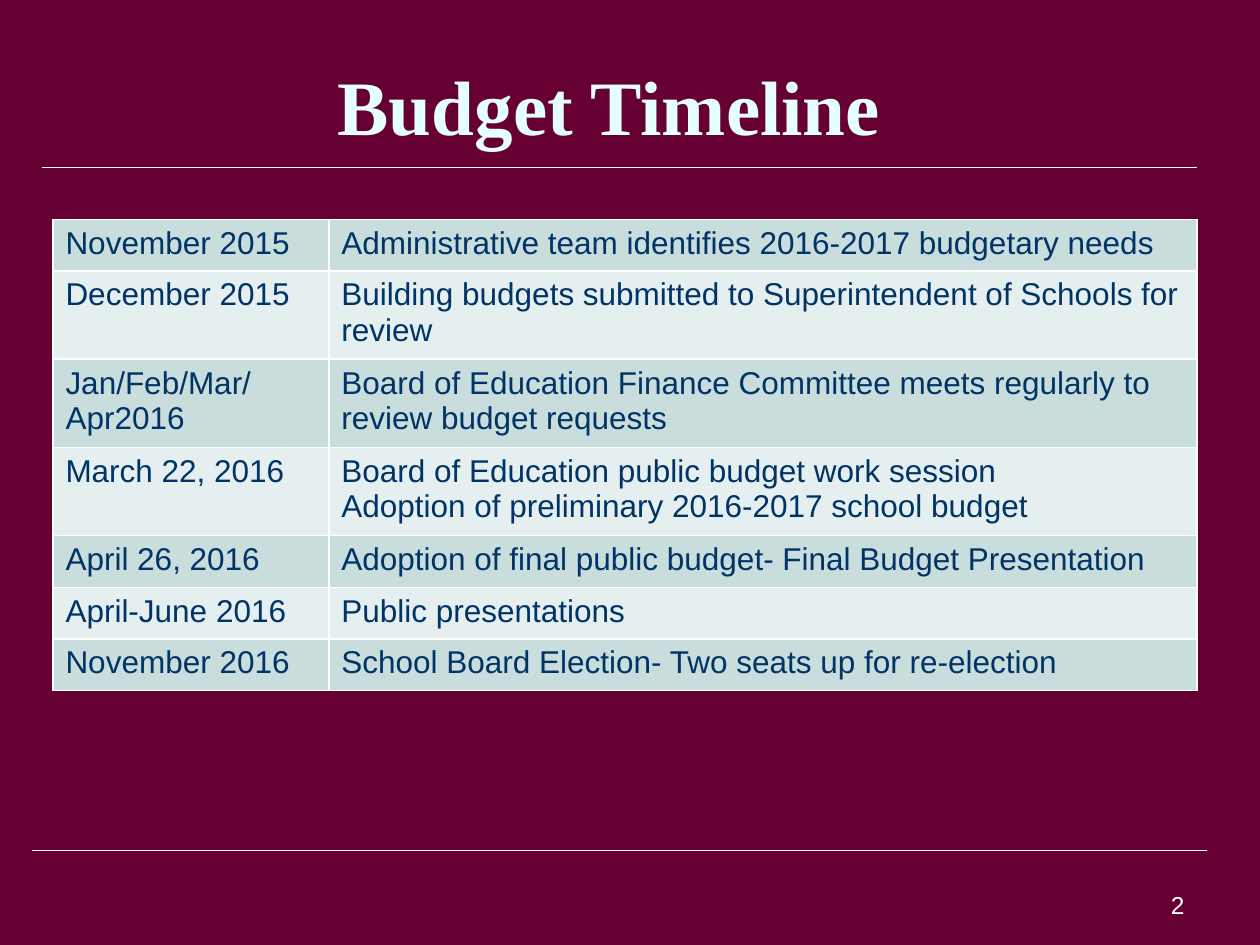
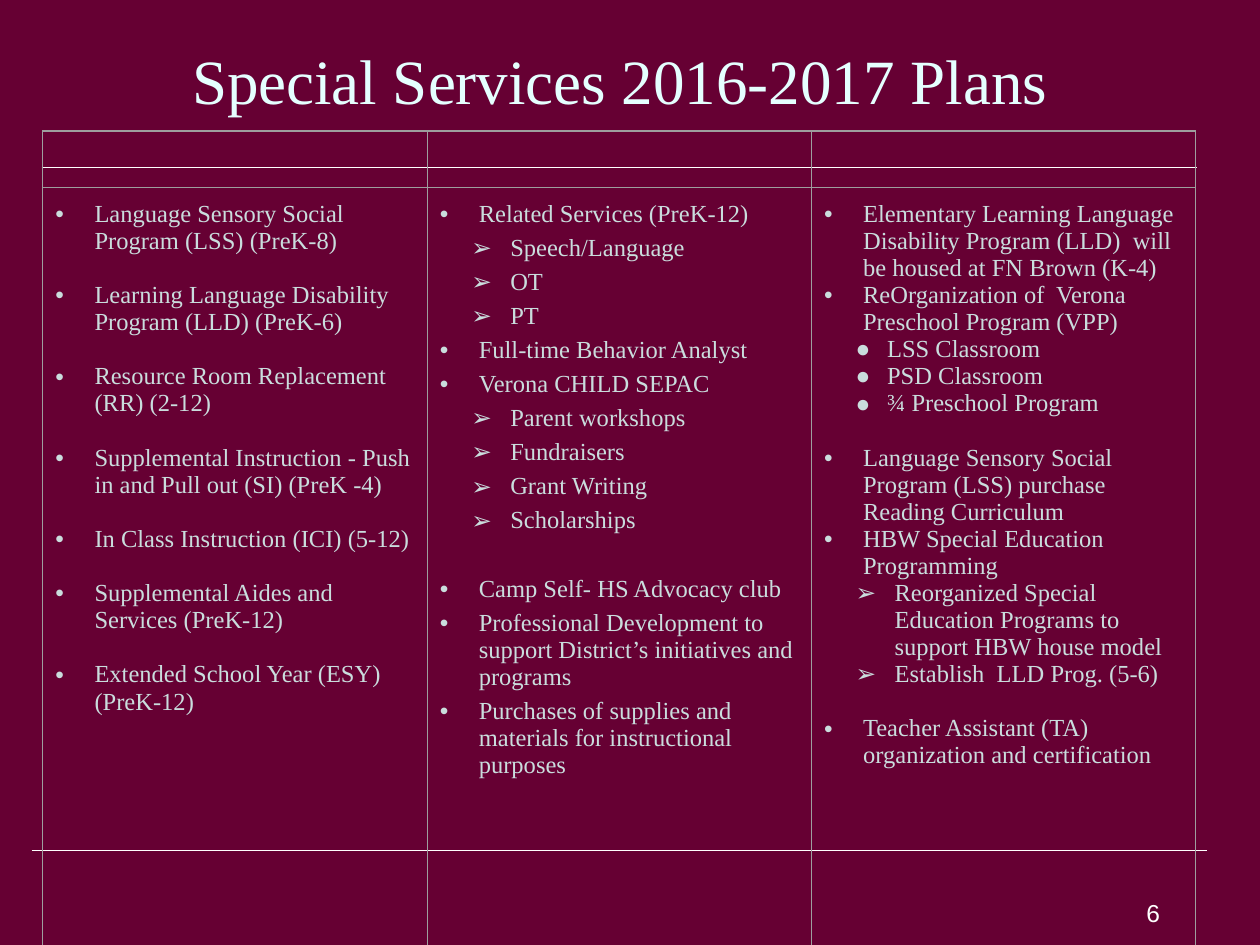
from lxml import etree
from pptx import Presentation
from pptx.dml.color import RGBColor
from pptx.enum.shapes import MSO_CONNECTOR
from pptx.enum.text import MSO_ANCHOR, PP_ALIGN
from pptx.oxml.ns import qn
from pptx.util import Pt

LINE = MSO_CONNECTOR.STRAIGHT
TOP, MID, BASE = MSO_ANCHOR.TOP, MSO_ANCHOR.MIDDLE, MSO_ANCHOR.BOTTOM
LEFT, MIDST, RIGHT = PP_ALIGN.LEFT, PP_ALIGN.CENTER, PP_ALIGN.RIGHT

SCALE = 9144
WINE, WHITE, ICE, NAVY, GREY = "660033", "FFFFFF", "E5FFFF", "003366", "9E9E9E"
MINT, PALE = "CADDDD", "E6EFEF"
SANS, SERIF = "Arial", "Times New Roman"
RULES = [(33, 133, 950), (25, 675, 958)]
ROW_GAP = 15.5

DATES = [
    ("November 2015", "Administrative team identifies 2016-2017 budgetary needs"),
    ("December 2015", "Building budgets submitted to Superintendent of Schools for review"),
    ("Jan/Feb/Mar/Apr2016",
     "Board of Education Finance Committee meets regularly to review budget requests"),
    ("March 22, 2016",
     "Board of Education public budget work session\n"
     "Adoption of preliminary 2016-2017 school budget"),
    ("April 26, 2016", "Adoption of final public budget- Final Budget Presentation"),
    ("April-June 2016", "Public presentations"),
    ("November 2016", "School Board Election- Two seats up for re-election"),
]

DOT, DART, DISC = "•", "➢", "●"
INDENTS = {DOT: (31, 31), DART: (56, 31), DISC: (50, 25)}

PLANS = [
    (0, [
        [(DOT, "Language Sensory Social Program (LSS) (PreK-8)")],
        [(DOT, "Learning Language Disability Program (LLD) (PreK-6)")],
        [(DOT, "Resource Room Replacement (RR) (2-12)")],
        [(DOT, "Supplemental Instruction - Push in and Pull out (SI) (PreK -4)")],
        [(DOT, "In Class Instruction (ICI) (5-12)")],
        [(DOT, "Supplemental Aides and Services (PreK-12)")],
        [(DOT, "Extended School Year (ESY) (PreK-12)")],
    ]),
    (4, [
        [(DOT, "Related Services (PreK-12)"),
         (DART, "Speech/Language"),
         (DART, "OT"),
         (DART, "PT"),
         (DOT, "Full-time Behavior Analyst"),
         (DOT, "Verona CHILD SEPAC"),
         (DART, "Parent workshops"),
         (DART, "Fundraisers"),
         (DART, "Grant Writing"),
         (DART, "Scholarships")],
        [(DOT, "Camp Self- HS Advocacy club"),
         (DOT, "Professional Development to support District’s initiatives and programs"),
         (DOT, "Purchases of supplies and materials for instructional purposes")],
    ]),
    (0, [
        [(DOT, "Elementary Learning Language Disability Program (LLD)  will"
               " be housed at FN Brown (K-4)"),
         (DOT, "ReOrganization of  Verona Preschool Program (VPP)"),
         (DISC, "LSS Classroom"),
         (DISC, "PSD Classroom"),
         (DISC, "¾ Preschool Program")],
        [(DOT, "Language Sensory Social Program (LSS) purchase Reading Curriculum"),
         (DOT, "HBW Special Education Programming"),
         (DART, "Reorganized Special Education Programs to support HBW house model"),
         (DART, "Establish  LLD Prog. (5-6)")],
        [(DOT, "Teacher Assistant (TA) organization and certification")],
    ]),
]


def px(size):
    """Turn px into EMU."""
    return int(size * SCALE)


def tint(code):
    """Turn a hex string into a colour."""
    return RGBColor.from_string(code)


def style(para, face, size, code, bold=False):
    """Set the font of a paragraph."""
    font = para.font
    font.name, font.size, font.bold = face, Pt(size), bold
    font.color.rgb = tint(code)


def label(slide, box, text, face, size, code, align, anchor, bold=False):
    """Place one line of text in a box."""
    frame = slide.shapes.add_textbox(*map(px, box)).text_frame
    frame.word_wrap = True
    frame.vertical_anchor = anchor
    para = frame.paragraphs[0]
    para.text, para.alignment = text, align
    style(para, face, size, code, bold)


def rule(slide, left, top, right):
    """Draw a level white line."""
    line = slide.shapes.add_connector(LINE, px(left), px(top), px(right), px(top))
    line.line.color.rgb = tint(WHITE)
    line.line.width = Pt(0.75)
    etree.SubElement(line._element.spPr, qn("a:effectLst"))


def page(deck):
    """Add a slide with the shared ground and rules."""
    slide = deck.slides.add_slide(deck.slide_layouts[6])
    fill = slide.background.fill
    fill.solid()
    fill.fore_color.rgb = tint(WINE)
    for ends in RULES:
        rule(slide, *ends)
    return slide


def title(slide, box, text, size, bold=False):
    """Place the slide title."""
    label(slide, box, text, SERIF, size, ICE, MIDST, MID, bold)


def edge(cell, code, width):
    """Draw all four borders of a cell."""
    props = cell._tc.get_or_add_tcPr()
    for side in ("lnL", "lnR", "lnT", "lnB"):
        line = etree.SubElement(props, qn(f"a:{side}"), w=str(Pt(width)))
        fill = etree.SubElement(line, qn("a:solidFill"))
        etree.SubElement(fill, qn("a:srgbClr"), val=code)


def grid(slide, left, top, cols, rows, code, width):
    """Add a plain bordered table."""
    box = left, top, sum(cols), sum(rows)
    table = slide.shapes.add_table(len(rows), len(cols), *map(px, box)).table
    table.first_row = table.horz_banding = False
    for col, size in zip(table.columns, cols):
        col.width = px(size)
    for row, size in zip(table.rows, rows):
        row.height = px(size)
    for cell in table.iter_cells():
        edge(cell, code, width)
        cell.fill.background()
    return table


def dates(slide, left, top):
    """Fill the table of budget dates."""
    table = grid(slide, left, top, [219, 689], [41] * len(DATES), WHITE, 1)
    for r, row in enumerate(DATES):
        for c, text in enumerate(row):
            cell = table.cell(r, c)
            cell.fill.solid()
            cell.fill.fore_color.rgb = tint(PALE if r % 2 else MINT)
            cell.text = text
            for para in cell.text_frame.paragraphs:
                style(para, SANS, 18, NAVY)


def bullet(para, mark):
    """Give a paragraph its mark and hanging indent."""
    left, hang = INDENTS[mark]
    props = para._p.get_or_add_pPr()
    props.set("marL", str(px(left)))
    props.set("indent", str(-px(hang)))
    etree.SubElement(props, qn("a:buFont"), typeface=SANS)
    etree.SubElement(props, qn("a:buChar"), char=mark)


def plan(cell, space, groups):
    """Fill a cell with groups of marked items."""
    cell.margin_top = cell.margin_bottom = px(10)
    items = [(g > 0 and i == 0, *item)
             for g, group in enumerate(groups) for i, item in enumerate(group)]
    cell.text = "\n".join(text for _, _, text in items)
    for para, (apart, mark, _) in zip(cell.text_frame.paragraphs, items):
        style(para, SERIF, 14, MINT)
        bullet(para, mark)
        para.space_before = Pt(2 * space + ROW_GAP if apart else space)


def plans(slide, left, top):
    """Fill the table of service plans."""
    table = grid(slide, left, top, [305] * len(PLANS), [45, 724, 24], GREY, 0.75)
    for c, (space, groups) in enumerate(PLANS):
        plan(table.cell(1, c), space, groups)


def main():
    """Build and save the deck."""
    deck = Presentation()
    deck.slide_width, deck.slide_height = px(1000), px(750)

    slide = page(deck)
    label(slide, (717, 683, 233, 52), "2", SANS, 14, WHITE, RIGHT, BASE)
    title(slide, (25, 33, 917, 100), "Budget Timeline", 44, True)
    dates(slide, 42, 174)

    slide = page(deck)
    title(slide, (42, 17, 900, 92), "Special Services 2016-2017 Plans", 36)
    label(slide, (900, 708, 31, 34), "6", SANS, 14, WHITE, LEFT, TOP)
    plans(slide, 34, 104)

    deck.save("out.pptx")


if __name__ == "__main__":
    main()
